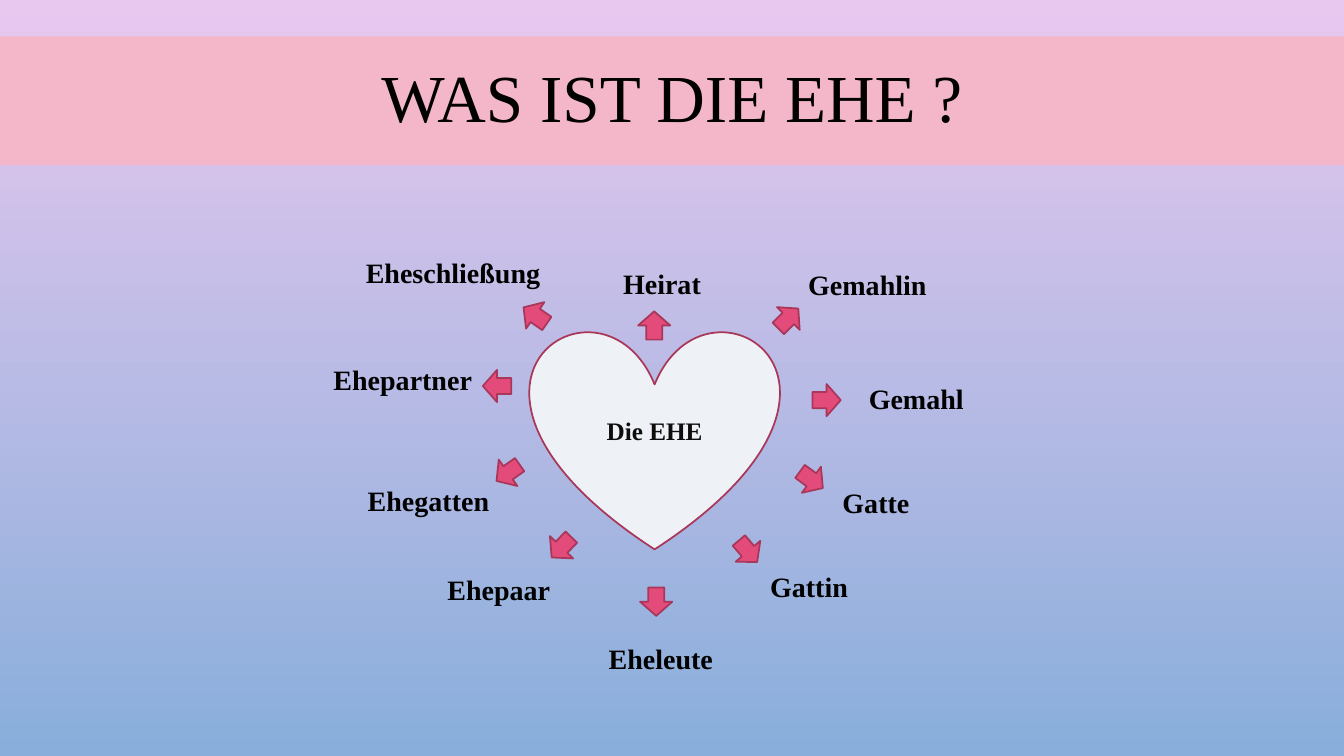
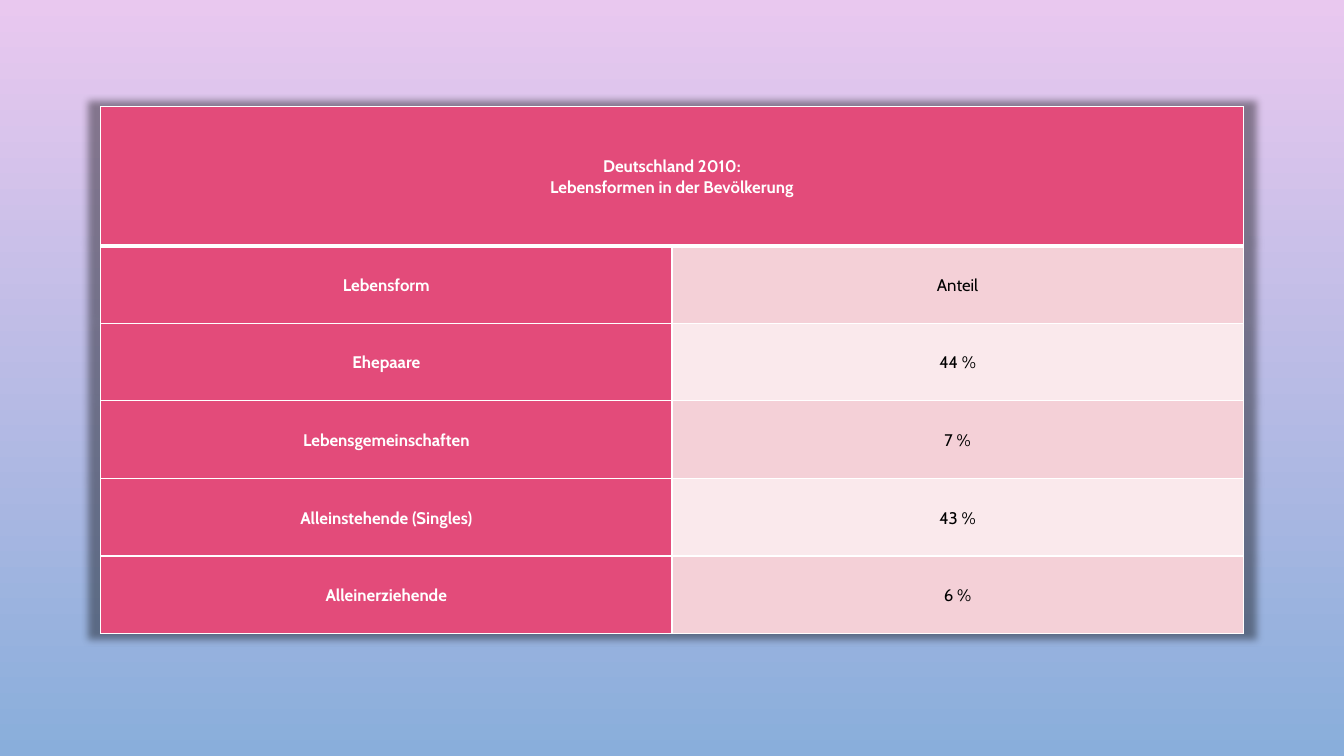
from lxml.etree import SubElement
from pptx import Presentation
from pptx.dml.color import RGBColor
from pptx.enum.shapes import MSO_SHAPE
from pptx.enum.text import MSO_ANCHOR, PP_ALIGN
from pptx.oxml import parse_xml
from pptx.oxml.ns import nsdecls, qn
from pptx.util import Pt

SLIDE_WIDTH, SLIDE_HEIGHT = Pt(960), Pt(540)
SERIF, SANS = "Times New Roman", "Cabin"

LILAC = RGBColor(0xE9, 0xC8, 0xEF)
SKY = RGBColor(0x89, 0xAE, 0xDB)
ROSE = RGBColor(0xF4, 0xB7, 0xCA)
PINK = RGBColor(0xE3, 0x4B, 0x7A)
CRIMSON = RGBColor(0xA8, 0x37, 0x5A)
ICE = RGBColor(0xEE, 0xF2, 0xF7)
BLUSH = RGBColor(0xF4, 0xD0, 0xD7)
PALE_BLUSH = RGBColor(0xFA, 0xE9, 0xEC)
BLACK = RGBColor(0, 0, 0)
INK = RGBColor(0x0D, 0x0D, 0x0D)
WHITE = RGBColor(0xFF, 0xFF, 0xFF)

ARROW_WIDTH, ARROW_HEIGHT = 20.2, 23
LABEL_WIDTH, LABEL_HEIGHT = 150, 32

# word, label left and top, arrow left and top, arrow rotation
SYNONYMS = [
    ("Heirat", 438, 186.5, 457.2, 221, 270),
    ("Gemahlin", 570.2, 187.2, 553, 216, 315),
    ("Gemahl", 613.5, 269.3, 580.3, 274.3, 0),
    ("Gatte", 594.7, 343.4, 569.5, 331.2, 36.1),
    ("Gattin", 543, 403.2, 524.2, 382.3, 49.7),
    ("Eheleute", 427.7, 455, 458.6, 418.3, 90),
    ("Ehepaar", 312.5, 405.5, 391, 379.4, 133.9),
    ("Ehegatten", 255.6, 342, 352.8, 326.2, 144.7),
    ("Ehepartner", 231.1, 255.6, 344.9, 264.2, 180),
    ("Eheschließung", 254.2, 178.6, 372.2, 213.8, 214.7),
]

TABLE_HEADING = "Deutschland 2010:\vLebensformen in der Bevölkerung"
HOUSEHOLDS = [
    ("Lebensform", "Anteil"),
    ("Ehepaare", "44 %"),
    ("Lebensgemeinschaften", "7 %"),
    ("Alleinstehende (Singles)", "43 %"),
    ("Alleinerziehende", "6 %"),
]


def add_slide(prs):
    slide = prs.slides.add_slide(prs.slide_layouts[6])
    fill = slide.background.fill
    fill.gradient()
    fill.gradient_angle = 270
    for stop, color in zip(fill.gradient_stops, (LILAC, SKY)):
        stop.color.rgb = color
    return slide


def write(frame, text, font_name, size, color, bold=False, align=PP_ALIGN.CENTER):
    paragraph = frame.paragraphs[0]
    paragraph.text = text
    paragraph.alignment = align
    font = paragraph.font
    font.name, font.size, font.bold = font_name, Pt(size), bold
    font.color.rgb = color
    return paragraph


def add_figure(slide, preset, left, top, width, height, fill, outline=None):
    figure = slide.shapes.add_shape(preset, Pt(left), Pt(top), Pt(width), Pt(height))
    figure.shadow.inherit = False
    figure.fill.solid()
    figure.fill.fore_color.rgb = fill
    if outline is None:
        figure.line.fill.background()
    else:
        figure.line.color.rgb = outline
        figure.line.width = Pt(1.25)
    figure.text_frame.vertical_anchor = MSO_ANCHOR.MIDDLE
    return figure


def add_title_band(slide, text):
    band = add_figure(slide, MSO_SHAPE.RECTANGLE, 0, 26, 960, 92, ROSE)
    write(band.text_frame, text, SERIF, 48, BLACK).line_spacing = 0.9


def add_label(slide, text, left, top):
    label = slide.shapes.add_textbox(Pt(left), Pt(top), Pt(LABEL_WIDTH), Pt(LABEL_HEIGHT))
    label.text_frame.word_wrap = True
    write(label.text_frame, text, SERIF, 20, BLACK, bold=True, align=PP_ALIGN.LEFT)


def add_arrow(slide, left, top, rotation):
    arrow = add_figure(slide, MSO_SHAPE.RIGHT_ARROW, left, top,
                       ARROW_WIDTH, ARROW_HEIGHT, PINK, CRIMSON)
    arrow.rotation = rotation


def set_borders(cell, top=1, bottom=1):
    properties = cell._tc.get_or_add_tcPr()
    for side, width in (("lnL", 1), ("lnR", 1), ("lnT", top), ("lnB", bottom)):
        line = SubElement(properties, qn(f"a:{side}"), w=str(Pt(width)))
        fill = SubElement(line, qn("a:solidFill"))
        SubElement(fill, qn("a:srgbClr"), val=str(WHITE))


def fill_cell(cell, text, fill, color, bold, top=1, bottom=1):
    set_borders(cell, top, bottom)
    cell.fill.solid()
    cell.fill.fore_color.rgb = fill
    cell.vertical_anchor = MSO_ANCHOR.MIDDLE
    cell.margin_left = cell.margin_right = Pt(5)
    cell.margin_top = cell.margin_bottom = Pt(2.5)
    write(cell.text_frame, text, SANS, 12, color, bold).line_spacing = 1.07


def add_table_shadow(table):
    table._tbl.tblPr.insert(0, parse_xml(
        f'<a:effectLst {nsdecls("a")}>'
        '<a:outerShdw blurRad="63500" sx="102000" sy="102000" algn="ctr" rotWithShape="0">'
        '<a:srgbClr val="000000"><a:alpha val="40000"/></a:srgbClr>'
        '</a:outerShdw></a:effectLst>'))


def add_household_table(slide):
    heading_height, row_height = 99.4, 55.4
    height = heading_height + row_height * len(HOUSEHOLDS)
    table = slide.shapes.add_table(len(HOUSEHOLDS) + 1, 2, Pt(72), Pt(76.2),
                                   Pt(816), Pt(height)).table
    add_table_shadow(table)
    for row in table.rows:
        row.height = Pt(row_height)
    table.rows[0].height = Pt(heading_height)

    heading = table.cell(0, 0)
    heading.merge(table.cell(0, 1))
    fill_cell(heading, TABLE_HEADING, PINK, WHITE, True, bottom=3)
    set_borders(table.cell(0, 1), bottom=3)
    for row, (household, share) in enumerate(HOUSEHOLDS, start=1):
        top = 3 if row == 1 else 1
        share_fill = BLUSH if row % 2 else PALE_BLUSH
        fill_cell(table.cell(row, 0), household, PINK, WHITE, True, top)
        fill_cell(table.cell(row, 1), share, share_fill, BLACK, False, top)


def build_marriage_slide(prs):
    slide = add_slide(prs)
    add_title_band(slide, "WAS IST DIE EHE ?")
    heart = add_figure(slide, MSO_SHAPE.HEART, 378.7, 235.4, 177.8, 157, ICE, CRIMSON)
    write(heart.text_frame, "Die EHE", SERIF, 18, INK, bold=True)
    for word, label_left, label_top, arrow_left, arrow_top, rotation in SYNONYMS:
        add_label(slide, word, label_left, label_top)
        add_arrow(slide, arrow_left, arrow_top, rotation)


def main():
    prs = Presentation()
    prs.slide_width, prs.slide_height = SLIDE_WIDTH, SLIDE_HEIGHT
    build_marriage_slide(prs)
    add_household_table(add_slide(prs))
    prs.save("out.pptx")


if __name__ == "__main__":
    main()
